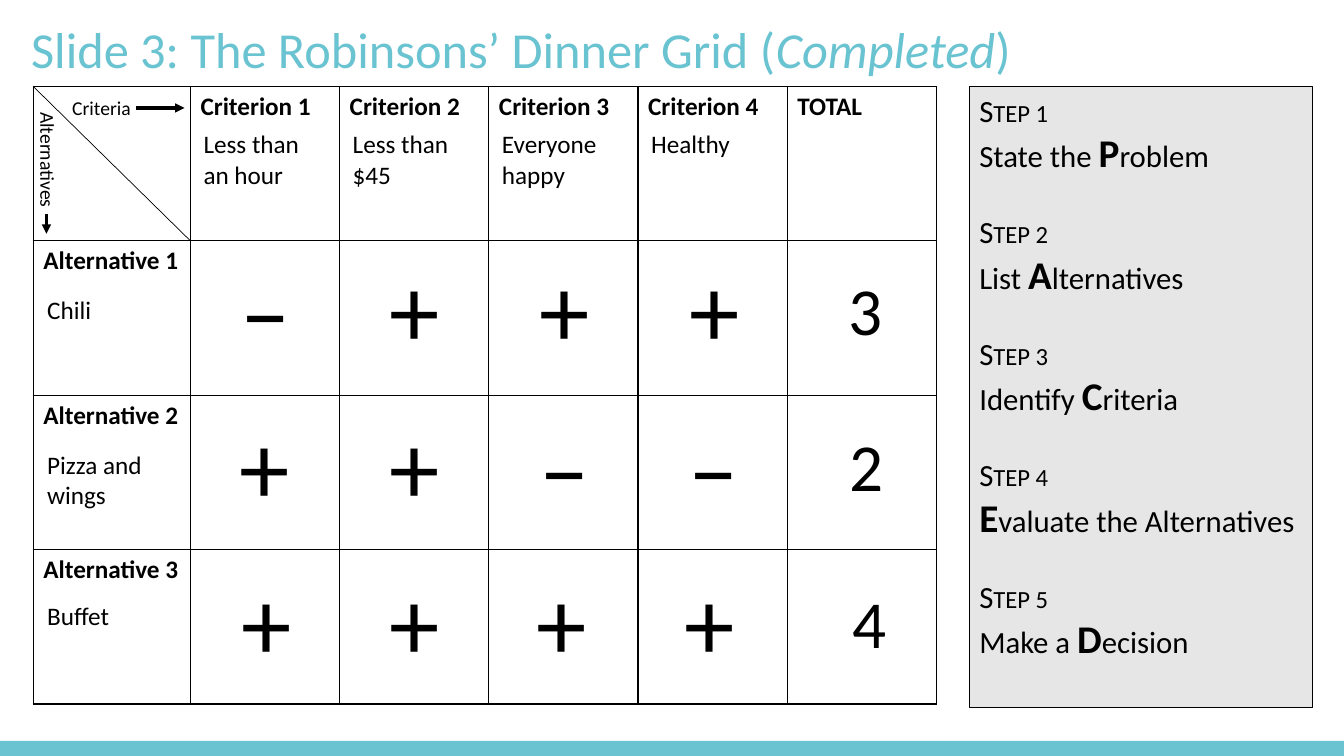
import pptx
import pptx.util
import pptx.dml.color
import pptx.enum.shapes
import pptx.enum.text
import pptx.oxml

Cm, Pt = pptx.util.Cm, pptx.util.Pt
RGBColor = pptx.dml.color.RGBColor
PP_ALIGN, MSO_ANCHOR = pptx.enum.text.PP_ALIGN, pptx.enum.text.MSO_ANCHOR
RECT = pptx.enum.shapes.MSO_SHAPE.RECTANGLE
TEAL = RGBColor(0x69, 0xC3, 0xD1)
BLACK = RGBColor(0, 0, 0)
WHITE = RGBColor(0xFF, 0xFF, 0xFF)
GREY = RGBColor(0xE7, 0xE6, 0xE6)
NS = 'xmlns:a="http://schemas.openxmlformats.org/drawingml/2006/main"'
ROW_H, COL_W, HEAD_W = 3.89, 3.76, 3.96
LEFT, TOP = 0.84, 2.18


def add_run(p, text, size, color=BLACK, **fmt):
    r = p.add_run()
    r.text = text
    r.font.color.rgb = color
    for name, value in {"name": "Calibri", "size": Pt(size), **fmt}.items():
        setattr(r.font, name, value)
    return r


def add_label(text, x, y, w, h, size, align=PP_ALIGN.LEFT):
    box = s.shapes.add_textbox(Cm(x), Cm(y), Cm(w), Cm(h))
    box.text_frame.word_wrap = True
    p = box.text_frame.paragraphs[0]
    p.alignment = align
    add_run(p, text, size)
    return box


prs = pptx.Presentation()
prs.slide_width, prs.slide_height = Cm(33.87), Cm(19.05)
s = prs.slides.add_slide(prs.slide_layouts[5])

title = s.shapes.title
title.left, title.top, title.width, title.height = Cm(0.53), Cm(0.48), Cm(29.21), Cm(1.68)
tf = title.text_frame
for name, value in {"word_wrap": True, "vertical_anchor": MSO_ANCHOR.MIDDLE,
                    "auto_size": pptx.enum.text.MSO_AUTO_SIZE.NONE}.items():
    setattr(tf, name, value)
p = tf.paragraphs[0]
p.alignment, p.line_spacing = PP_ALIGN.LEFT, 0.9
for text, italic in [("Slide 3: The Robinsons’ Dinner Grid (", False), ("Completed", True), (")", False)]:
    add_run(p, text, 36, TEAL, italic=italic)

bar = s.shapes.add_shape(RECT, 0, Cm(18.67), prs.slide_width, Cm(0.38))
bar.shadow.inherit = False
bar.fill.solid()
bar.fill.fore_color.rgb = TEAL
bar.line.fill.background()

table = s.shapes.add_table(4, 6, Cm(LEFT), Cm(TOP), Cm(HEAD_W + 5 * COL_W), Cm(4 * ROW_H)).table
for i, col in enumerate(table.columns):
    col.width = Cm(COL_W if i else HEAD_W)
heads = ["", "Criterion 1", "Criterion 2", "Criterion 3", "Criterion 4", "TOTAL"]
for i, row in enumerate(table.rows):
    row.height = Cm(ROW_H)
    for j, cell in enumerate(row.cells):
        cell.fill.solid()
        cell.fill.fore_color.rgb = WHITE
        text = heads[j] if i == 0 else f"Alternative {i}" if j == 0 else ""
        if text:
            add_run(cell.text_frame.paragraphs[0], text, 18, bold=True)
        for k, side in enumerate("LRTB"):
            cell._tc.get_or_add_tcPr().insert(k, pptx.oxml.parse_xml(
                f'<a:ln{side} {NS} w="12700"><a:solidFill><a:srgbClr val="{BLACK}"/></a:solidFill></a:ln{side}>'))

panel = s.shapes.add_shape(RECT, Cm(24.43), Cm(TOP), Cm(8.64), Cm(15.65))
panel.shadow.inherit = False
panel.fill.solid()
panel.fill.fore_color.rgb = GREY
panel.line.color.rgb = BLACK
panel.line.width = Pt(0.75)
tf = panel.text_frame
tf.word_wrap, tf.vertical_anchor = True, MSO_ANCHOR.TOP
steps = [("State the ", "P", "roblem"), ("List ", "A", "lternatives"), ("Identify ", "C", "riteria"),
         ("", "E", "valuate the Alternatives"), ("Make a ", "D", "ecision")]
for i, (before, letter, after) in enumerate(steps):
    p = tf.add_paragraph() if i else tf.paragraphs[0]
    p.alignment = PP_ALIGN.LEFT
    if i:
        p.space_before = Pt(26.8)
    r = add_run(p, f"Step {i + 1}", 22)
    r._r.get_or_add_rPr().set("cap", "small")
    p.add_line_break()
    if before:
        add_run(p, before, 22)
    add_run(p, letter, 28, bold=True)
    add_run(p, after, 22)

lines = [(LEFT, TOP, LEFT + HEAD_W, TOP + ROW_H, 0.5, False),
         (1.17, 5.38, 1.17, 5.89, 2.25, True),
         (3.43, 2.72, 4.65, 2.72, 2.25, True)]
for x1, y1, x2, y2, width, arrow in lines:
    c = s.shapes.add_connector(pptx.enum.shapes.MSO_CONNECTOR.STRAIGHT, Cm(x1), Cm(y1), Cm(x2), Cm(y2))
    c.line.color.rgb = BLACK
    c.line.width = Pt(width)
    if arrow:
        c.line._get_or_add_ln().append(pptx.oxml.parse_xml(f'<a:tailEnd {NS} type="triangle"/>'))
    c._element.spPr.append(pptx.oxml.parse_xml(f'<a:effectLst {NS}/>'))

add_label("Criteria", 1.57, 2.29, 3.07, 0.86, 14)
add_label("Alternatives", -0.33, 3.68, 3.07, 0.86, 14).rotation = 90

for i, text in enumerate(["Less than an hour", "Less than $45", "Everyone happy", "Healthy"]):
    add_label(text, 4.88 + 3.76 * i, 3.12, 3.63, 1.8, 18)
for text, y in [("Chili", 7.29), ("Pizza and wings", 11.2), ("Buffet", 15.01)]:
    add_label(text, 0.94, y, 3.63, 1.8, 18)

ratings = [("–+++3", [4.81, 8.58, 12.36, 16.13, 19.94]),
           ("++––2", [4.78, 8.56, 12.34, 16.1, 19.96]),
           ("++++4", [4.83, 8.56, 12.27, 16, 20.04])]
for i, (marks, lefts) in enumerate(ratings):
    y = 6.1 + 3.94 * i
    for mark, x in zip(marks, lefts):
        if mark.isdigit():
            add_label(mark, x, y + 0.54, COL_W, 2.31, 48, PP_ALIGN.CENTER)
        else:
            add_label(mark, x, y, COL_W, 3.33, 72, PP_ALIGN.CENTER)

prs.save("out.pptx")
